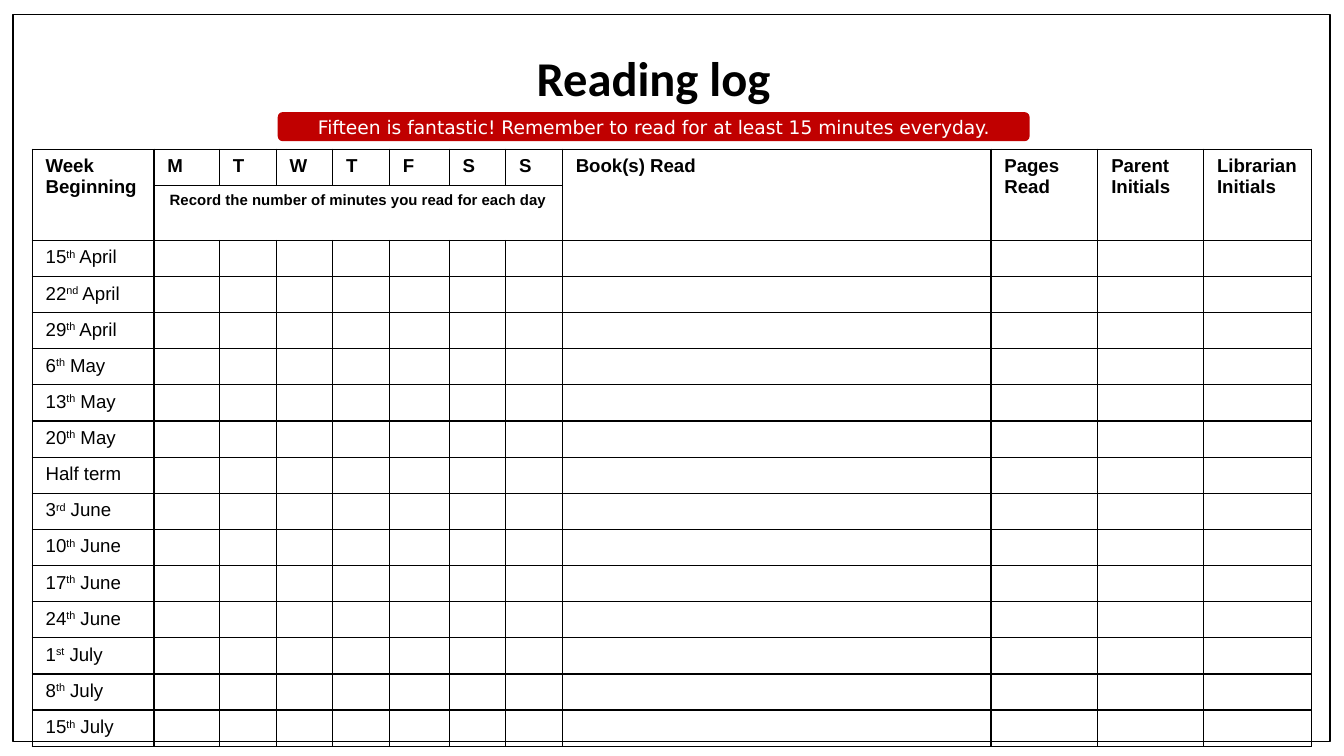
"""Build a one-page reading log with a weekly table."""
from dataclasses import dataclass

from lxml.etree import SubElement
from pptx import Presentation
from pptx.dml.color import RGBColor
from pptx.enum.shapes import MSO_SHAPE
from pptx.enum.text import MSO_ANCHOR, MSO_AUTO_SIZE, PP_ALIGN
from pptx.oxml.ns import qn
from pptx.util import Cm, Pt

COLOURS = {"ink": "000000", "banner": "C00000", "paper": "FFFFFF"}
TITLE = {"name": "Calibri", "size": Pt(26), "bold": True}
BANNER = {"name": "DejaVu Sans", "size": Pt(10), "bold": False}
HEADING = {"name": "Arial", "size": Pt(10), "bold": True}
HINT = {**HEADING, "size": Pt(8)}
ENTRY = {**HEADING, "bold": False}

COLUMN_WIDTHS = [2.3, 1.24, 1.07, 1.07, 1.07, 1.13, 1.07, 1.07, 8.1, 2.02, 2, 2.04]
ROW_HEIGHT = 0.68
HEADER_ROWS = 2
DAYS = "MTWTFSS"
HEADINGS = ["Week Beginning", *DAYS, "Book(s) Read", "Pages Read",
            "Parent Initials", "Librarian Initials"]


@dataclass
class Week:
    """A row label, with an optional raised ordinal ending."""
    start: str
    ordinal: str = ""
    month: str = ""


WEEKS = [
    Week("15", "th", " April"), Week("22", "nd", " April"), Week("29", "th", " April"),
    Week("6", "th", " May"), Week("13", "th", " May"), Week("20", "th", " May"),
    Week("Half term"),
    Week("3", "rd", " June"), Week("10", "th", " June"), Week("17", "th", " June"),
    Week("24", "th", " June"),
    Week("1", "st", " July"), Week("8", "th", " July"), Week("15", "th", " July"),
]


def colour(name: str) -> RGBColor:
    """Look up a named colour."""
    return RGBColor.from_string(COLOURS[name])


def write(paragraph, text: str, formats: dict, ink: str = "ink"):
    """Add a formatted span to a paragraph."""
    span = paragraph.add_run()
    span.text = text
    for name, value in formats.items():
        setattr(span.font, name, value)
    span.font.color.rgb = colour(ink)
    return span


def write_centred(box, text: str, formats: dict, ink: str = "ink"):
    """Fill a box with one centred line."""
    frame = box.text_frame
    frame.word_wrap = True
    frame.auto_size = MSO_AUTO_SIZE.NONE
    frame.vertical_anchor = MSO_ANCHOR.MIDDLE
    for side in ("left", "right", "top", "bottom"):
        setattr(frame, f"margin_{side}", Cm(0.25))
    paragraph = frame.paragraphs[0]
    paragraph.alignment = PP_ALIGN.CENTER
    write(paragraph, text, formats, ink)
    return paragraph


def rule_cell(cell) -> None:
    """Draw all four borders of a cell and clear its fill."""
    properties = cell._tc.get_or_add_tcPr()
    for side in ("lnL", "lnR", "lnT", "lnB"):
        line = SubElement(properties, qn(f"a:{side}"), w=str(Pt(0.75)))
        fill = SubElement(line, qn("a:solidFill"))
        SubElement(fill, qn("a:srgbClr"), val=COLOURS["ink"])
    cell.fill.background()


def write_week(paragraph, week: Week) -> None:
    """Write a week label with its ordinal raised."""
    write(paragraph, week.start, ENTRY)
    if week.ordinal:
        ordinal = write(paragraph, week.ordinal, ENTRY)
        ordinal._r.get_or_add_rPr().set("baseline", "30000")
        write(paragraph, week.month, ENTRY)


def add_log(page) -> None:
    """Add the log table."""
    row_count = HEADER_ROWS + len(WEEKS)
    table = page.shapes.add_table(
        row_count, len(COLUMN_WIDTHS), Cm(0.61), Cm(2.82),
        Cm(sum(COLUMN_WIDTHS)), Cm(ROW_HEIGHT * row_count)).table
    table.first_row = table.horz_banding = False
    for column, width in zip(table.columns, COLUMN_WIDTHS):
        column.width = Cm(width)
    for row in table.rows:
        row.height = Cm(ROW_HEIGHT)
    for cell in table.iter_cells():
        rule_cell(cell)

    for index, heading in enumerate(HEADINGS):
        cell = table.cell(0, index)
        write(cell.text_frame.paragraphs[0], heading, HEADING)
        if heading not in DAYS:
            cell.merge(table.cell(1, index))
    hint = table.cell(1, 1)
    hint.merge(table.cell(1, len(DAYS)))
    paragraph = hint.text_frame.paragraphs[0]
    paragraph.alignment = PP_ALIGN.CENTER
    write(paragraph, "Record the number of minutes you read for each day", HINT)

    for index, week in enumerate(WEEKS, HEADER_ROWS):
        write_week(table.cell(index, 0).text_frame.paragraphs[0], week)
        for column in range(1, len(COLUMN_WIDTHS)):
            blank = table.cell(index, column).text_frame.paragraphs[0]
            blank._p.get_or_add_endParaRPr().set("sz", "1000")


def add_frame(page):
    """Add the thin page outline."""
    frame = page.shapes.add_shape(
        MSO_SHAPE.RECTANGLE, Cm(0.25), Cm(0.27), Cm(24.89), Cm(13.75))
    frame.shadow.inherit = False
    frame.fill.background()
    frame.line.color.rgb = colour("ink")
    frame.line.width = Pt(0.75)
    return frame


def add_banner(page) -> None:
    """Add the rounded reminder banner."""
    banner = page.shapes.add_shape(
        MSO_SHAPE.ROUNDED_RECTANGLE, Cm(5.25), Cm(2.12), Cm(14.21), Cm(0.55))
    banner.adjustments[0] = 0.17
    banner.shadow.inherit = False
    banner.fill.solid()
    banner.fill.fore_color.rgb = colour("banner")
    banner.line.fill.background()
    write_centred(banner, "Fifteen is fantastic! Remember to read for at least "
                  "15 minutes everyday.", BANNER, "paper")


def main() -> None:
    """Build and save the deck."""
    deck = Presentation()
    deck.slide_width, deck.slide_height = Cm(25.4), Cm(14.29)
    page = deck.slides.add_slide(deck.slide_layouts.get_by_name("Title Only"))
    title = page.shapes.title
    title.left, title.top, title.width, title.height = Cm(8.88), Cm(0.76), Cm(6.95), Cm(1.22)
    write_centred(title, "Reading log", TITLE).line_spacing = 1.15
    title.element.addprevious(add_frame(page).element)
    add_log(page)
    add_banner(page)
    deck.save("out.pptx")


if __name__ == "__main__":
    main()
